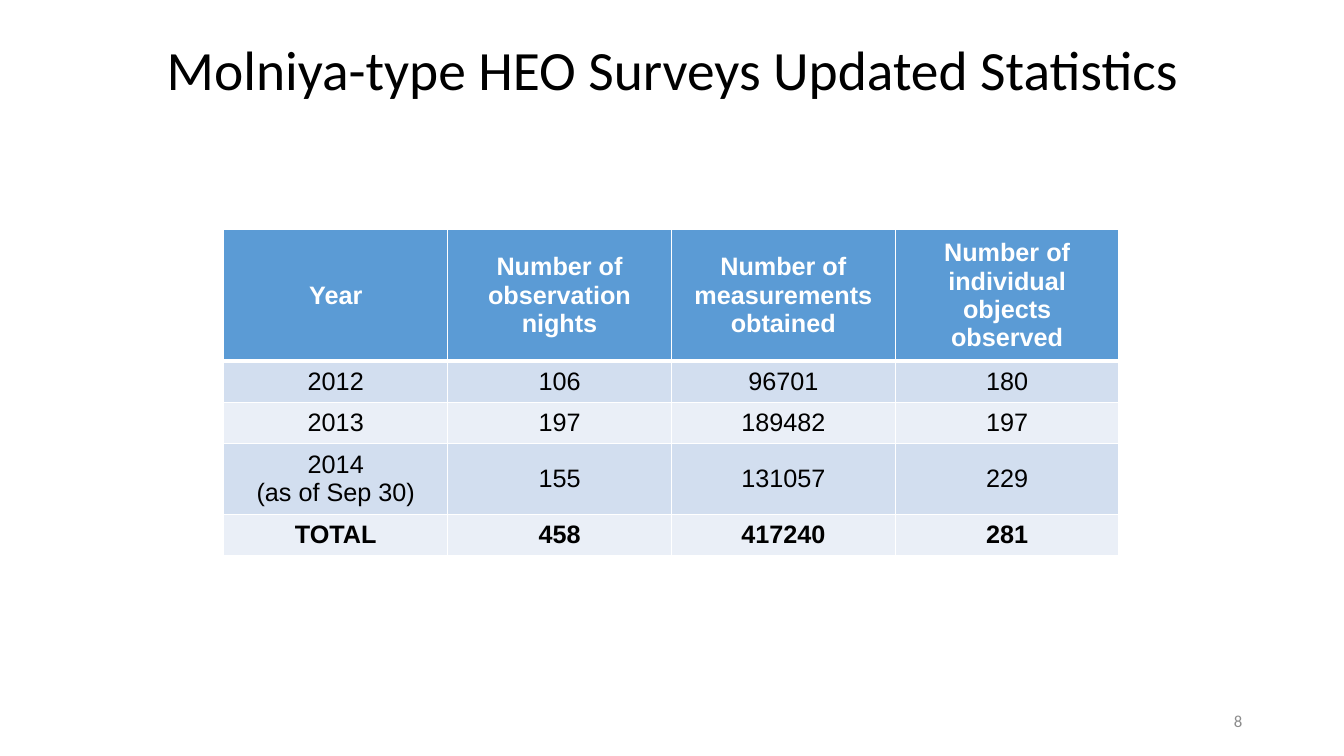
"""Build the slide with the Molniya-type HEO survey statistics table."""
from lxml import etree
from pptx import Presentation
from pptx.dml.color import RGBColor
from pptx.enum.text import MSO_ANCHOR, MSO_AUTO_SIZE, PP_ALIGN
from pptx.oxml.ns import qn
from pptx.util import Inches, Pt

CENTER, RIGHT = PP_ALIGN.CENTER, PP_ALIGN.RIGHT
MIDDLE = MSO_ANCHOR.MIDDLE
NO_AUTOFIT = MSO_AUTO_SIZE.NONE

HEADER_FILL = "5B9BD5"
BAND_FILLS = ["D2DEEF", "EAEFF7"]
STATISTICS = [
    ["Year", "Number of observation nights", "Number of measurements obtained",
     "Number of individual objects observed"],
    ["2012", "106", "96701", "180"],
    ["2013", "197", "189482", "197"],
    ["2014\n(as of Sep 30)", "155", "131057", "229"],
    ["TOTAL", "458", "417240", "281"],
]
ROW_HEIGHTS = [1.22, 0.41, 0.41, 0.66, 0.41]
COLUMN_WIDTH = 2.22


def write(frame, text, font, size, color, align, bold=False):
    frame.text = text
    frame.word_wrap = True
    frame.vertical_anchor = MIDDLE
    for paragraph in frame.paragraphs:
        paragraph.alignment = align
        for run in paragraph.runs:
            run.font.name = font
            run.font.size = Pt(size)
            run.font.bold = bold
            run.font.color.rgb = RGBColor.from_string(color)


def add_border(cell, side, width):
    properties = cell._tc.get_or_add_tcPr()
    border = etree.SubElement(properties, qn(f"a:ln{side}"), w=str(Pt(width)))
    fill = etree.SubElement(border, qn("a:solidFill"))
    etree.SubElement(fill, qn("a:srgbClr"), val="FFFFFF")


presentation = Presentation()
presentation.slide_width = Inches(13.33)
presentation.slide_height = Inches(7.5)
slide = presentation.slides.add_slide(presentation.slide_layouts[5])

title = slide.shapes.title
title.left, title.top = Inches(0.92), Inches(0.36)
title.width, title.height = Inches(11.5), Inches(0.72)
write(title.text_frame, "Molniya-type HEO Surveys Updated Statistics",
      "Calibri", 39.6, "000000", CENTER)
title.text_frame.auto_size = NO_AUTOFIT
title.text_frame.paragraphs[0].line_spacing = 0.9

page_number = slide.shapes.add_textbox(Inches(9.42), Inches(6.95), Inches(3), Inches(0.4))
write(page_number.text_frame, "8", "Calibri", 12, "8C8C8C", RIGHT)

table = slide.shapes.add_table(
    len(STATISTICS), len(STATISTICS[0]), Inches(2.22), Inches(2.28),
    Inches(COLUMN_WIDTH * len(STATISTICS[0])), Inches(sum(ROW_HEIGHTS))).table
for column in table.columns:
    column.width = Inches(COLUMN_WIDTH)

for row, values in enumerate(STATISTICS):
    table.rows[row].height = Inches(ROW_HEIGHTS[row])
    is_header = row == 0
    is_total = row == len(STATISTICS) - 1
    row_fill = HEADER_FILL if is_header else BAND_FILLS[(row - 1) % 2]
    text_color = "FFFFFF" if is_header else "000000"
    top_width = 3 if row == 1 else 1
    bottom_width = 3 if is_header else 1
    for column, value in enumerate(values):
        cell = table.cell(row, column)
        for side, width in [("L", 1), ("R", 1), ("T", top_width), ("B", bottom_width)]:
            add_border(cell, side, width)
        cell.fill.solid()
        cell.fill.fore_color.rgb = RGBColor.from_string(row_fill)
        write(cell.text_frame, value, "Arial", 18, text_color, CENTER, is_header or is_total)
        cell.vertical_anchor = MIDDLE

presentation.save("out.pptx")
